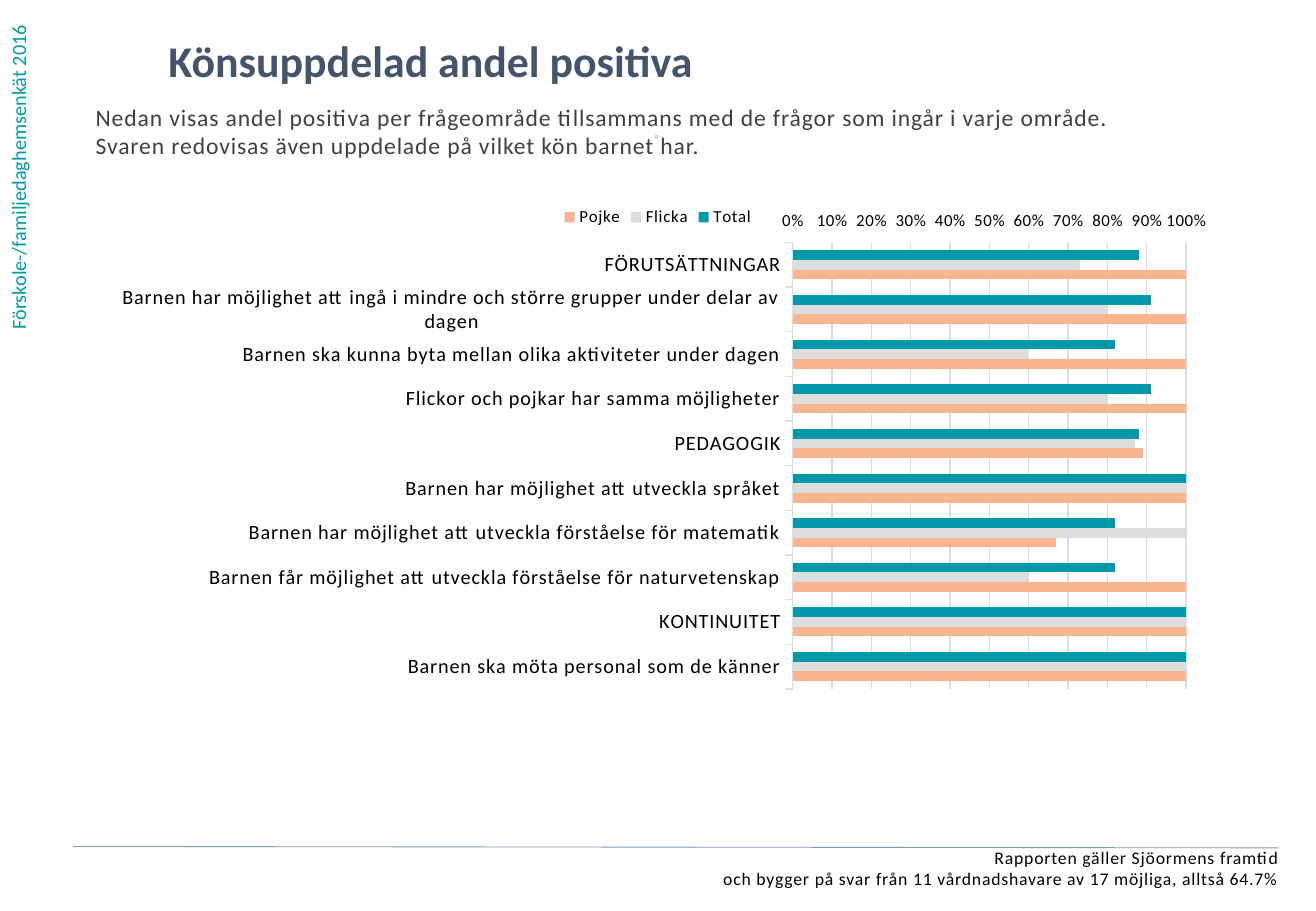
import lxml.etree
import pptx
import pptx.chart.data
import pptx.dml.color
import pptx.enum.chart
import pptx.enum.shapes
import pptx.enum.text
import pptx.oxml
import pptx.oxml.ns
import pptx.util

Cm = pptx.util.Cm
Pt = pptx.util.Pt
qn = pptx.oxml.ns.qn
ALIGN = pptx.enum.text.PP_ALIGN

FONT = "Calibri"
SPACING = "50"
COLORS = {
    "survey": "009BA4", "title": "44546A", "intro": "404040", "text": "000000",
    "dot": "D2D9E2", "rule": "8497B0", "grid": "DDDDDD",
    "Total": "0099AA", "Flicka": "DDDDDD", "Pojke": "F9B590",
}
CATEGORIES = [
    "FÖRUTSÄTTNINGAR",
    "Barnen har möjlighet att ingå i mindre och större grupper under delar av dagen",
    "Barnen ska kunna byta mellan olika aktiviteter under dagen",
    "Flickor och pojkar har samma möjligheter",
    "PEDAGOGIK",
    "Barnen har möjlighet att utveckla språket",
    "Barnen har möjlighet att utveckla förståelse för matematik",
    "Barnen får möjlighet att utveckla förståelse för naturvetenskap",
    "KONTINUITET",
    "Barnen ska möta personal som de känner",
]
SHARES = {
    "Total": [0.88, 0.91, 0.82, 0.91, 0.88, 1, 0.82, 0.82, 1, 1],
    "Flicka": [0.73, 0.8, 0.6, 0.8, 0.87, 1, 1, 0.6, 1, 1],
    "Pojke": [1, 1, 1, 1, 0.89, 1, 0.67, 1, 1, 1],
}
PLOT_LAYOUT = {"x": 0.62, "y": 0.09, "w": 0.35, "h": 0.83}


def rgb(name):
    """Return the named colour."""
    return pptx.dml.color.RGBColor.from_string(COLORS[name])


def add_text(slide, box, text, size, color, bold=False, align=ALIGN.LEFT,
             spaced=True, vertical=False):
    """Place text in a box given in centimetres, one paragraph a line."""
    sp = slide.shapes.add_textbox(*map(Cm, box))
    tf = sp.text_frame
    tf.word_wrap = True
    if vertical:
        tf.element.bodyPr.set("vert", "vert270") if hasattr(tf, "element") else \
            sp.element.txBody.find(qn("a:bodyPr")).set("vert", "vert270")
    else:
        tf.margin_left = tf.margin_right = tf.margin_top = tf.margin_bottom = 0
    tf.text = text
    for p in tf.paragraphs:
        p.alignment = align
        for r in p.runs:
            r.font.name, r.font.size, r.font.bold = FONT, Pt(size), bold
            r.font.color.rgb = rgb(color)
            if spaced:
                r.font._element.set("spc", SPACING)


def add_header(slide, box):
    """Place the title and the introduction."""
    x, y, w, h = box
    add_text(slide, (x + 1.52, y, w - 2.85, 1.45), "Könsuppdelad andel positiva",
             26, "title", bold=True, spaced=False)
    add_text(slide, (x, y + 1.45, w, h - 1.45),
             "Nedan visas andel positiva per frågeområde tillsammans med de frågor "
             "som ingår i varje område.\n"
             "Svaren redovisas även uppdelade på vilket kön barnet har.", 14, "intro")
    add_text(slide, (x + 7.82, y + 1.9, 7.82, 1), "⋅", 12, "dot",
             bold=True, align=ALIGN.CENTER)


def set_plot_layout(chart):
    """Fix the inner plot area as shares of the chart."""
    area = chart.element.find(".//" + qn("c:plotArea"))
    for old in area.findall(qn("c:layout")):
        area.remove(old)
    layout = lxml.etree.Element(qn("c:layout"))
    manual = lxml.etree.SubElement(layout, qn("c:manualLayout"))
    settings = {"layoutTarget": "inner", "xMode": "edge", "yMode": "edge", **PLOT_LAYOUT}
    for tag, value in settings.items():
        lxml.etree.SubElement(manual, qn("c:" + tag)).set("val", str(value))
    area.insert(0, layout)


def format_font(font, size):
    """Set the chart font."""
    font.name, font.size = FONT, Pt(size)
    font.color.rgb = rgb("text")


def add_share_chart(slide, box):
    """Place the bar chart of positive shares by gender."""
    data = pptx.chart.data.CategoryChartData(number_format="0%")
    data.categories = CATEGORIES
    for name, values in SHARES.items():
        data.add_series(name, values)
    kinds = pptx.enum.chart
    chart = slide.shapes.add_chart(kinds.XL_CHART_TYPE.BAR_CLUSTERED,
                                   *map(Cm, box), data).chart
    chart.has_title = False
    format_font(chart.font, 10)
    chart.has_legend = True
    chart.legend.position = kinds.XL_LEGEND_POSITION.TOP
    chart.legend.include_in_layout = False
    format_font(chart.legend.font, 10)

    plot = chart.plots[0]
    plot.gap_width, plot.overlap, plot.vary_by_categories = 162, 0, False
    for series in plot.series:
        series.format.fill.solid()
        series.format.fill.fore_color.rgb = rgb(series.name)

    cat, val = chart.category_axis, chart.value_axis
    cat.reverse_order = True
    cat.crosses = kinds.XL_AXIS_CROSSES.MAXIMUM
    val.minimum_scale, val.maximum_scale, val.major_unit = 0, 1, 0.1
    val.tick_labels.number_format = "0%;0%"
    val.tick_labels.number_format_is_linked = False
    val.format.line.fill.background()
    val.has_major_gridlines = True
    for line in (cat.format.line, val.major_gridlines.format.line):
        line.color.rgb, line.width = rgb("grid"), Pt(0.75)
    for axis, size in ((cat, 12), (val, 10)):
        axis.major_tick_mark = kinds.XL_TICK_MARK.OUTSIDE
        format_font(axis.tick_labels.font, size)
    for props in chart.element.iter(qn("a:defRPr")):
        props.set("spc", SPACING)
    set_plot_layout(chart)


def add_footer(slide, box):
    """Place the rule and the note on the number of answers."""
    x, y, w, h = box
    line = slide.shapes.add_connector(pptx.enum.shapes.MSO_CONNECTOR.STRAIGHT,
                                      Cm(x), Cm(y), Cm(x + w), Cm(y + 0.03))
    line.line.color.rgb, line.line.width = rgb("rule"), Pt(0.5)
    lxml.etree.SubElement(line.element.spPr, qn("a:effectLst"))
    add_text(slide, (x, y, w, h),
             "Rapporten gäller Sjöormens framtid\n"
             "och bygger på svar från 11 vårdnadshavare av 17 möjliga, alltså 64.7%",
             10.5, "text", align=ALIGN.RIGHT)


def main():
    """Build the slide and save it."""
    prs = pptx.Presentation()
    prs.slide_width, prs.slide_height = Cm(27.51), Cm(19.05)
    slide = prs.slides.add_slide(prs.slide_layouts[6])
    add_text(slide, (0, 0, 1, 7.14), "Förskole-/familjedaghemsenkät 2016",
             12, "survey", spaced=False, vertical=True)
    add_header(slide, (2, 0.7, 24.03, 4))
    add_share_chart(slide, (2, 4.06, 23.5, 11.25))
    add_footer(slide, (1.53, 17.7, 25.2, 1.08))
    prs.save("out.pptx")


if __name__ == "__main__":
    main()
